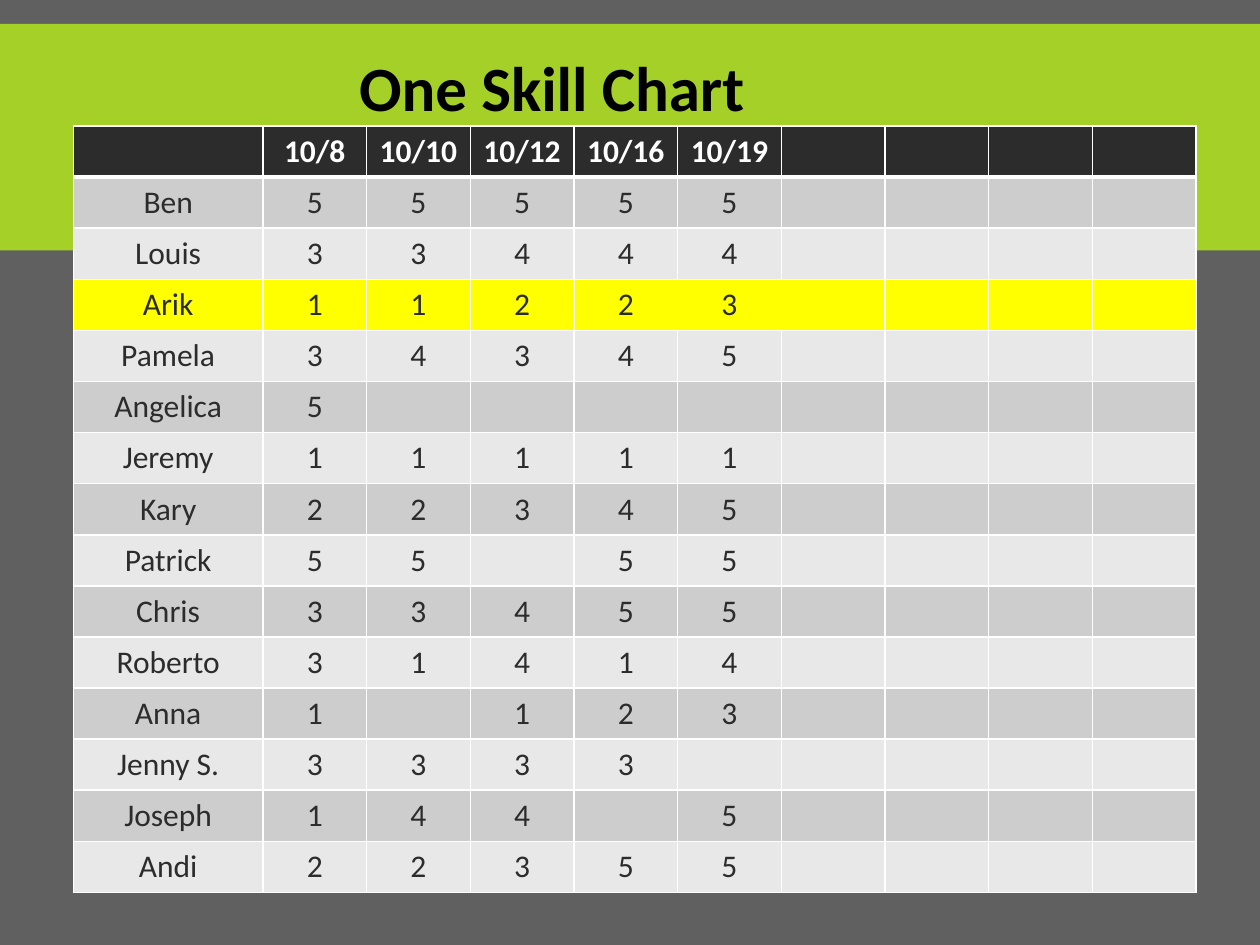
from lxml import etree
from pptx import Presentation
from pptx import util as u
from pptx.dml.color import RGBColor
from pptx.enum import shapes, text
from pptx.oxml.ns import qn

COLORS = {
    "background": "606060", "band": "A5D028", "title": "000000",
    "header": "2C2C2C", "odd": "CDCDCD", "even": "E8E8E8",
    "highlight": "FFFF00", "border": "FFFFFF",
    "header_text": "FFFFFF", "body_text": "2C2C2C",
}
DATES = ["10/8", "10/10", "10/12", "10/16", "10/19"]
SCORES = {
    "Ben": [5, 5, 5, 5, 5],
    "Louis": [3, 3, 4, 4, 4],
    "Arik": [1, 1, 2, 2, 3],
    "Pamela": [3, 4, 3, 4, 5],
    "Angelica": [5],
    "Jeremy": [1, 1, 1, 1, 1],
    "Kary": [2, 2, 3, 4, 5],
    "Patrick": [5, 5, "", 5, 5],
    "Chris": [3, 3, 4, 5, 5],
    "Roberto": [3, 1, 4, 1, 4],
    "Anna": [1, "", 1, 2, 3],
    "Jenny S.": [3, 3, 3, 3],
    "Joseph": [1, 4, 4, "", 5],
    "Andi": [2, 2, 3, 5, 5],
}
HIGHLIGHTED = "Arik"
DATE_COLS = 9
NAME_W, DATE_W, ROW_H = 3.82, 2.09, 1.03


def style_run(r, color, **formats):
    for name, value in {"name": "Calibri", **formats}.items():
        setattr(r.font, name, value)
    r.font.color.rgb = RGBColor.from_string(COLORS[color])


def set_borders(cell, widths):
    tcPr = cell._tc.get_or_add_tcPr()
    for i, (side, width) in enumerate(widths.items()):
        ln = etree.Element(qn(f"a:ln{side}"), w=str(u.Pt(width)))
        fill = etree.SubElement(ln, qn("a:solidFill"))
        etree.SubElement(fill, qn("a:srgbClr"), val=COLORS["border"])
        tcPr.insert(i, ln)


prs = Presentation()
prs.slide_width, prs.slide_height = u.Cm(25.4), u.Cm(19.05)
s = prs.slides.add_slide(prs.slide_layouts[6])

# Background and green band
s.background.fill.solid()
s.background.fill.fore_color.rgb = RGBColor.from_string(COLORS["background"])
sp = s.shapes.add_shape(shapes.MSO_SHAPE.RECTANGLE, 0, u.Cm(0.48), prs.slide_width, u.Cm(4.57))
sp.shadow.inherit = False
sp.fill.solid()
sp.fill.fore_color.rgb = RGBColor.from_string(COLORS["band"])
sp.line.fill.background()

# Score table
rows = [["", *DATES]] + [[name, *scores] for name, scores in SCORES.items()]
table = s.shapes.add_table(
    len(rows), DATE_COLS + 1, u.Cm(1.48), u.Cm(2.54),
    u.Cm(NAME_W + DATE_COLS * DATE_W), u.Cm(len(rows) * ROW_H)).table
for i, col in enumerate(table.columns):
    col.width = u.Cm(DATE_W if i else NAME_W)

for i, values in enumerate(rows):
    table.rows[i].height = u.Cm(ROW_H)
    if i == 0:
        fill = "header"
    elif values[0] == HIGHLIGHTED:
        fill = "highlight"
    else:
        fill = "odd" if i % 2 else "even"
    widths = {"L": 1, "R": 1, "T": 3 if i == 1 else 1, "B": 3 if i == 0 else 1}
    for j in range(DATE_COLS + 1):
        cell = table.cell(i, j)
        cell.fill.solid()
        cell.fill.fore_color.rgb = RGBColor.from_string(COLORS[fill])
        cell.vertical_anchor = text.MSO_ANCHOR.MIDDLE
        set_borders(cell, widths)
        if j < len(values) and values[j] != "":
            p = cell.text_frame.paragraphs[0]
            p.alignment = text.PP_ALIGN.CENTER
            r = p.add_run()
            r.text = str(values[j])
            style_run(r, "body_text" if i else "header_text", size=u.Pt(18), bold=i == 0)

# Title
tf = s.shapes.add_textbox(u.Cm(6.99), u.Cm(0.85), u.Cm(12.5), u.Cm(1.8)).text_frame
tf.word_wrap = True
tf.auto_size = text.MSO_AUTO_SIZE.SHAPE_TO_FIT_TEXT
r = tf.paragraphs[0].add_run()
r.text = "One Skill Chart"
style_run(r, "title", size=u.Pt(36), bold=True)

prs.save("out.pptx")
